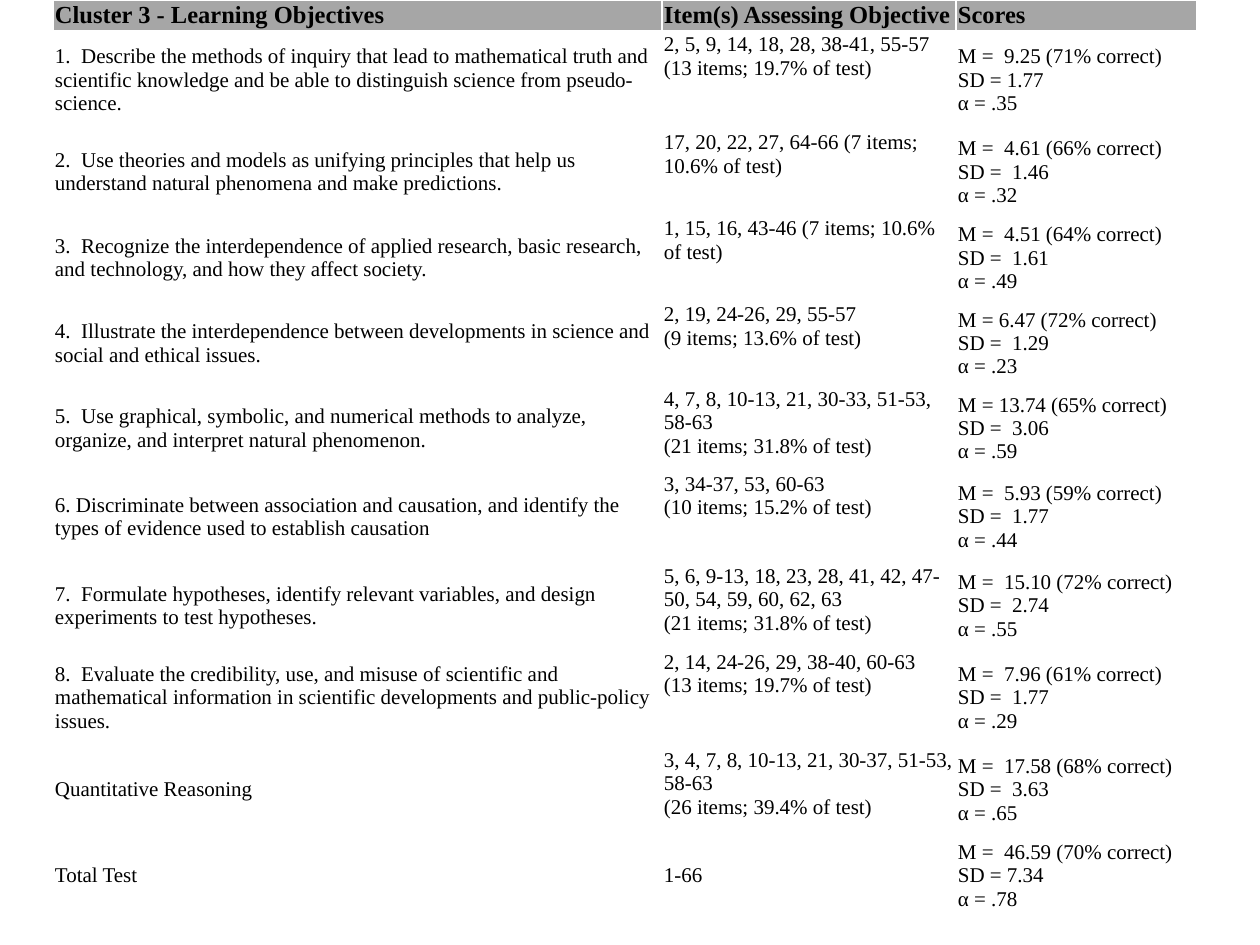
"""Build a slide with a table of learning objectives, test items and scores."""
from lxml.etree import SubElement
from pptx import Presentation
from pptx.dml.color import RGBColor
from pptx.enum.text import MSO_ANCHOR
from pptx.oxml.ns import qn
from pptx.util import Pt

PX = 914400 / 126
COLORS = {"text": "000000", "header": "A6A6A6", "border": "FFFFFF"}
FONT = "Times New Roman"


def px(length):
    return round(length * PX)


def add_borders(cell):
    properties = cell._tc.get_or_add_tcPr()
    for position, side in enumerate(("lnL", "lnR", "lnT", "lnB")):
        line = SubElement(properties, qn(f"a:{side}"), w=str(Pt(1)))
        fill = SubElement(line, qn("a:solidFill"))
        SubElement(fill, qn("a:srgbClr"), val=COLORS["border"])
        properties.remove(line)
        properties.insert(position, line)


headings = ("Cluster 3 - Learning Objectives", "Item(s) Assessing Objective", "Scores")
objectives = [
    ("1.  Describe the methods of inquiry that lead to mathematical truth and scientific knowledge "
     "and be able to distinguish science from pseudo-science.",
     "2, 5, 9, 14, 18, 28, 38-41, 55-57\n(13 items; 19.7% of test)",
     "M =  9.25 (71% correct)\nSD = 1.77\nα = .35"),
    ("2.  Use theories and models as unifying principles that help us understand natural phenomena "
     "and make predictions.",
     "17, 20, 22, 27, 64-66 (7 items; 10.6% of test)",
     "M =  4.61 (66% correct)\nSD =  1.46\nα = .32"),
    ("3.  Recognize the interdependence of applied research, basic research, and technology, "
     "and how they affect society.",
     "1, 15, 16, 43-46 (7 items; 10.6% of test)",
     "M =  4.51 (64% correct)\nSD =  1.61\nα = .49"),
    ("4.  Illustrate the interdependence between developments in science and social and ethical issues.",
     "2, 19, 24-26, 29, 55-57\n(9 items; 13.6% of test)",
     "M = 6.47 (72% correct)\nSD =  1.29\nα = .23"),
    ("5.  Use graphical, symbolic, and numerical methods to analyze, organize, "
     "and interpret natural phenomenon.",
     "4, 7, 8, 10-13, 21, 30-33, 51-53, 58-63\n(21 items; 31.8% of test)",
     "M = 13.74 (65% correct)\nSD =  3.06\nα = .59"),
    ("6. Discriminate between association and causation, and identify the types of evidence "
     "used to establish causation",
     "3, 34-37, 53, 60-63\n(10 items; 15.2% of test)",
     "M =  5.93 (59% correct)\nSD =  1.77\nα = .44"),
    ("7.  Formulate hypotheses, identify relevant variables, and design experiments to test hypotheses.",
     "5, 6, 9-13, 18, 23, 28, 41, 42, 47-50, 54, 59, 60, 62, 63\n(21 items; 31.8% of test)",
     "M =  15.10 (72% correct)\nSD =  2.74\nα = .55"),
    ("8.  Evaluate the credibility, use, and misuse of scientific and mathematical information "
     "in scientific developments and public-policy issues.",
     "2, 14, 24-26, 29, 38-40, 60-63\n(13 items; 19.7% of test)",
     "M =  7.96 (61% correct)\nSD =  1.77\nα = .29"),
    ("Quantitative Reasoning",
     "3, 4, 7, 8, 10-13, 21, 30-37, 51-53, 58-63\n(26 items; 39.4% of test)",
     "M =  17.58 (68% correct)\nSD =  3.63\nα = .65"),
    ("Total Test", "1-66", "M =  46.59 (70% correct)\nSD = 7.34\nα = .78"),
]
rows = [headings, *objectives]
column_widths = (609, 294, 241)
row_heights = (31, 98, 86, 86, 85, 85, 92, 86, 98, 86, 86)

presentation = Presentation()
presentation.slide_width, presentation.slide_height = px(1260), px(945)
slide = presentation.slides.add_slide(presentation.slide_layouts[6])
scores = slide.shapes.add_table(
    len(rows), len(headings), px(53), 0, px(sum(column_widths)), px(sum(row_heights))
).table
scores.horz_banding = False

for column, width in zip(scores.columns, column_widths):
    column.width = px(width)

for row_index, (texts, height) in enumerate(zip(rows, row_heights)):
    scores.rows[row_index].height = px(height)
    is_header = row_index == 0
    is_total = row_index == len(rows) - 1
    for column_index, text in enumerate(texts):
        cell = scores.cell(row_index, column_index)
        cell.margin_left = cell.margin_right = cell.margin_top = cell.margin_bottom = px(2)
        is_item_list = column_index == 1 and not is_header and not is_total
        cell.vertical_anchor = MSO_ANCHOR.TOP if is_item_list else MSO_ANCHOR.MIDDLE
        if is_header:
            cell.fill.solid()
            cell.fill.fore_color.rgb = RGBColor.from_string(COLORS["header"])
        else:
            cell.fill.background()
        add_borders(cell)
        for line_index, line in enumerate(text.split("\n")):
            frame = cell.text_frame
            paragraph = frame.add_paragraph() if line_index else frame.paragraphs[0]
            run = paragraph.add_run()
            run.text = line
            run.font.name = FONT
            run.font.size = Pt(14 if is_header else 12)
            run.font.bold = is_header
            run.font.color.rgb = RGBColor.from_string(COLORS["text"])

presentation.save("out.pptx")
